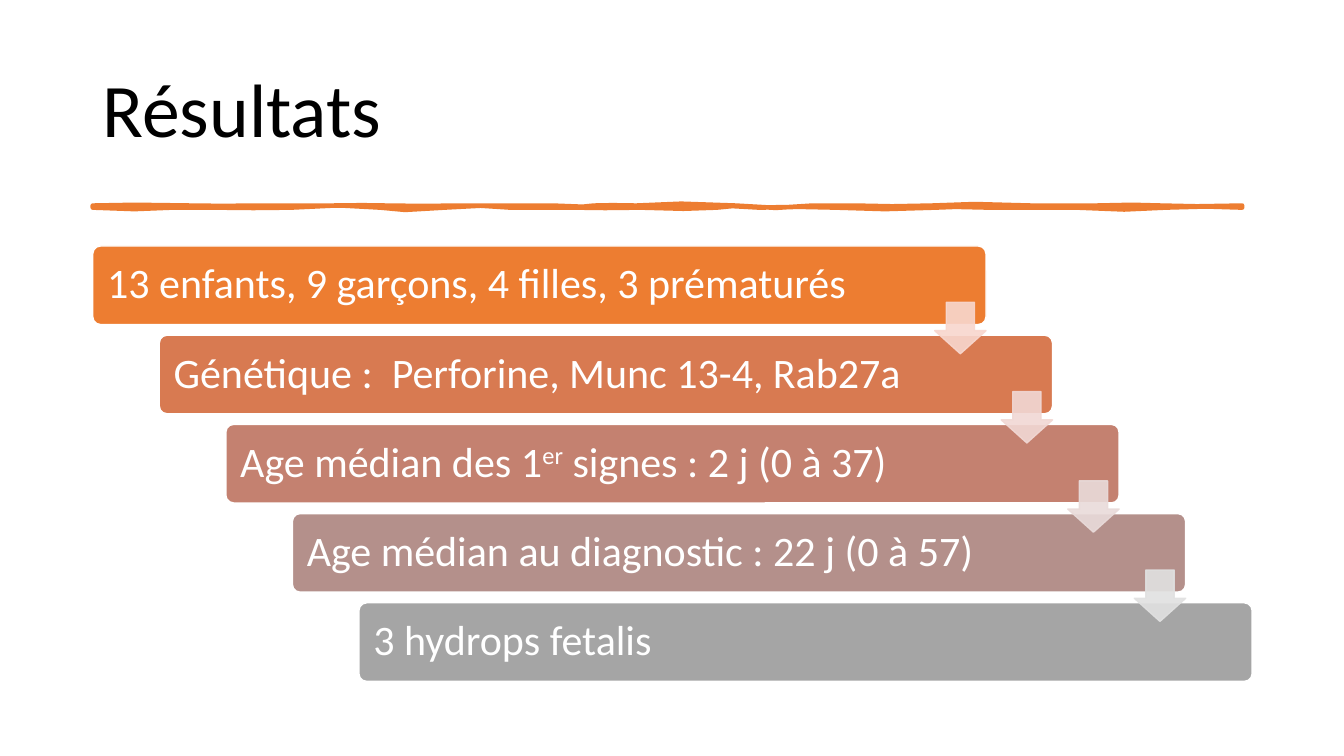
from dataclasses import dataclass

from lxml import etree
from pptx import Presentation
from pptx.dml.color import RGBColor
from pptx.enum.shapes import MSO_SHAPE
from pptx.enum.text import MSO_ANCHOR, PP_ALIGN
from pptx.oxml.ns import qn
from pptx.util import Inches, Pt

ROUNDED = MSO_SHAPE.ROUNDED_RECTANGLE
DOWN_ARROW = MSO_SHAPE.DOWN_ARROW
MIDDLE = MSO_ANCHOR.MIDDLE
LEFT = PP_ALIGN.LEFT

FONT = "Calibri"
ORANGE = "ED7D31"
WHITE = "FFFFFF"

# Staircase geometry, in inches
FIRST_LEFT, FIRST_TOP, LAST_TOP = 0.92, 2.44, 5.98
STEP_X = 0.66
BAR_WIDTH, BAR_HEIGHT = 8.86, 0.78
TEXT_INSET = 0.12
ARROW_SIZE, ARROW_DROP = 0.51, 0.56

# Hand-drawn rule: start point, then cubic curves (two controls, end)
RULE_START = (0.92, 2.04)
RULE_CURVES = [
    (1.19, 2.04, 1.44, 2.02, 1.9, 2.04), (2.37, 2.06, 2.2, 2.03, 2.44, 2.04),
    (2.67, 2.05, 3.03, 2.03, 3.31, 2.04), (3.6, 2.05, 3.59, 2.02, 3.84, 2.04),
    (4.1, 2.06, 4.23, 2.03, 4.6, 2.04), (4.98, 2.05, 5.14, 2.03, 5.48, 2.04),
    (5.81, 2.05, 5.81, 2.06, 5.89, 2.04), (5.98, 2.02, 6.15, 2.05, 6.31, 2.04),
    (6.47, 2.03, 7.01, 2, 7.3, 2.04), (7.59, 2.08, 7.81, 2.06, 8.06, 2.04),
    (8.31, 2.02, 8.27, 2.06, 8.48, 2.04), (8.68, 2.02, 9.01, 2.08, 9.24, 2.04),
    (9.47, 2, 9.82, 2.04, 10.23, 2.04), (10.63, 2.04, 10.63, 2.04, 10.87, 2.04),
    (11.12, 2.04, 11.36, 2.02, 11.52, 2.04), (11.68, 2.06, 12.03, 2.04, 12.32, 2.04),
    (12.32, 2.05, 12.32, 2.05, 12.32, 2.06), (12.05, 2.06, 11.89, 2.03, 11.56, 2.06),
    (11.22, 2.09, 11.1, 2.08, 10.68, 2.06), (10.27, 2.04, 10.23, 2.08, 9.81, 2.06),
    (9.39, 2.04, 9.52, 2.06, 9.28, 2.06), (9.04, 2.06, 8.51, 2.1, 8.29, 2.06),
    (8.06, 2.02, 7.82, 2.08, 7.53, 2.06), (7.24, 2.04, 7.25, 2.04, 7.11, 2.06),
    (6.98, 2.08, 6.61, 2.07, 6.35, 2.06), (6.09, 2.05, 5.9, 2.08, 5.7, 2.06),
    (5.51, 2.04, 5.28, 2.08, 5.06, 2.06), (4.83, 2.04, 4.73, 2.03, 4.41, 2.06),
    (4.09, 2.09, 3.9, 2.09, 3.77, 2.06), (3.63, 2.03, 3.1, 2.03, 2.89, 2.06),
    (2.68, 2.09, 2.35, 2.04, 2.13, 2.06), (1.92, 2.08, 1.89, 2.04, 1.71, 2.06),
    (1.54, 2.08, 1.14, 2.08, 0.92, 2.06),
]


@dataclass(frozen=True)
class Result:
    text: str
    fill: str
    arrow: str | None = None
    superscript: str = ""
    ending: str = ""


RESULTS = [
    Result("13 enfants, 9 garçons, 4 filles, 3 prématurés", ORANGE, "F8D7CE"),
    Result("Génétique :  Perforine, Munc 13-4, Rab27a", "D87A51", "F1D8D4"),
    Result("Age médian des 1", "C48170", "E9DBDA", "er", " signes : 2 j (0 à 37)"),
    Result("Age médian au diagnostic : 22 j (0 à 57)", "B4908B", "E1E1E1"),
    Result("3 hydrops fetalis", "A5A5A5"),
]
STEP_Y = (LAST_TOP - FIRST_TOP) / (len(RESULTS) - 1)


def color(value: str) -> RGBColor:
    return RGBColor.from_string(value)


def paint(shape, fill: str, line: str, line_width: float) -> None:
    shape.shadow.inherit = False
    shape.fill.solid()
    shape.fill.fore_color.rgb = color(fill)
    shape.line.color.rgb = color(line)
    shape.line.width = Pt(line_width)


def style_paragraph(paragraph, size: float, font_color: str) -> None:
    paragraph.alignment = LEFT
    paragraph.line_spacing = 0.9
    paragraph.font.name = FONT
    paragraph.font.size = Pt(size)
    paragraph.font.color.rgb = color(font_color)


def add_title(slide, text: str) -> None:
    title = slide.shapes.add_textbox(Inches(0.92), Inches(0.4), Inches(11.5), Inches(1.45))
    frame = title.text_frame
    frame.word_wrap = True
    frame.vertical_anchor = MIDDLE
    frame.text = text
    style_paragraph(frame.paragraphs[0], 54, "000000")


def rule_points() -> list[tuple[int, int]]:
    """Middle and end of every curve."""
    points = []
    x0, y0 = RULE_START
    for x1, y1, x2, y2, x3, y3 in RULE_CURVES:
        points.append((Inches((x0 + 3 * x1 + 3 * x2 + x3) / 8),
                       Inches((y0 + 3 * y1 + 3 * y2 + y3) / 8)))
        points.append((Inches(x3), Inches(y3)))
        x0, y0 = x3, y3
    return points


def add_rule(slide) -> None:
    x, y = RULE_START
    builder = slide.shapes.build_freeform(Inches(x), Inches(y))
    builder.add_line_segments(rule_points(), close=True)
    paint(builder.convert_to_shape(), ORANGE, ORANGE, 3.25)


def add_bar(slide, result: Result, left: float, top: float) -> None:
    bar = slide.shapes.add_shape(
        ROUNDED, Inches(left), Inches(top), Inches(BAR_WIDTH), Inches(BAR_HEIGHT))
    bar.adjustments[0] = 0.1
    paint(bar, result.fill, WHITE, 1)
    frame = bar.text_frame
    frame.word_wrap = True
    frame.vertical_anchor = MIDDLE
    frame.margin_left = frame.margin_right = Inches(TEXT_INSET)
    frame.margin_top = frame.margin_bottom = Inches(TEXT_INSET)
    paragraph = frame.paragraphs[0]
    style_paragraph(paragraph, 30, WHITE)
    paragraph.add_run().text = result.text
    if result.superscript:
        raised = paragraph.add_run()
        raised.text = result.superscript
        raised.font._element.set("baseline", "30000")
        paragraph.add_run().text = result.ending


def add_arrow(slide, fill: str, left: float, top: float) -> None:
    arrow = slide.shapes.add_shape(
        DOWN_ARROW, Inches(left), Inches(top), Inches(ARROW_SIZE), Inches(ARROW_SIZE))
    arrow.adjustments[0] = 0.55
    arrow.adjustments[1] = 0.45
    paint(arrow, fill, fill, 1)
    # Fill and outline at 90 % opacity
    for tint in arrow._element.spPr.iter(qn("a:srgbClr")):
        etree.SubElement(tint, qn("a:alpha")).set("val", "90000")


def main() -> None:
    presentation = Presentation()
    presentation.slide_width = Inches(13.33)
    presentation.slide_height = Inches(7.5)
    slide = presentation.slides.add_slide(presentation.slide_layouts[6])

    # Heading
    add_title(slide, "Résultats")
    add_rule(slide)

    # Staircase of results, then the arrows over it
    places = [(FIRST_LEFT + i * STEP_X, FIRST_TOP + i * STEP_Y) for i in range(len(RESULTS))]
    for result, (left, top) in zip(RESULTS, places):
        add_bar(slide, result, left, top)
    for result, (left, top) in zip(RESULTS, places):
        if result.arrow:
            add_arrow(slide, result.arrow, left + BAR_WIDTH - ARROW_SIZE, top + ARROW_DROP)

    presentation.save("out.pptx")


if __name__ == "__main__":
    main()
